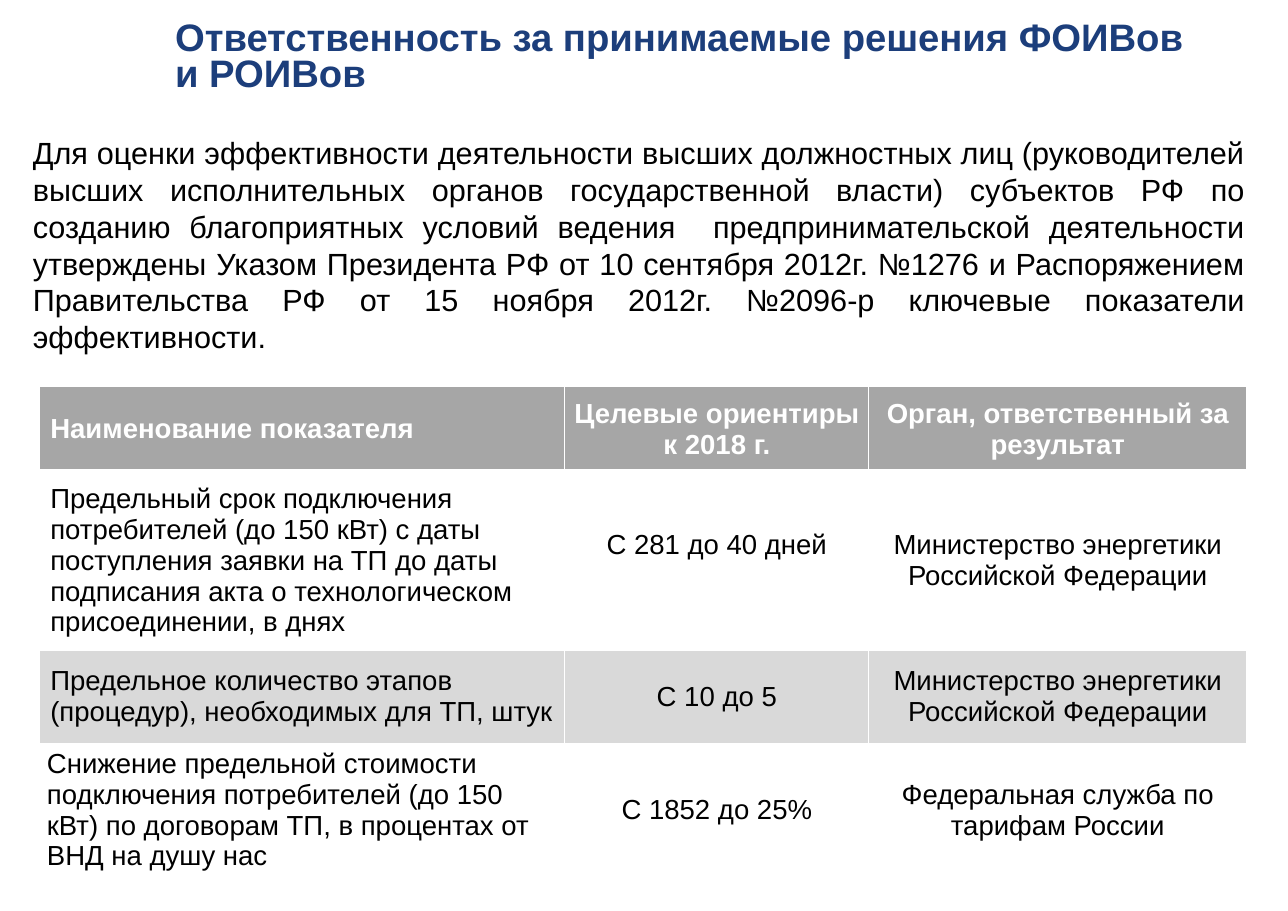
"""Build a slide on officials' responsibility, with a table of target indicators."""
from lxml.etree import SubElement
from pptx import Presentation
from pptx.dml.color import RGBColor
from pptx.enum.text import MSO_ANCHOR, PP_ALIGN
from pptx.oxml.ns import qn
from pptx.util import Inches, Pt

COLORS = {"title": "1C3E7B", "text": "000000", "white": "FFFFFF",
          "header": "A6A6A6", "band": "D9D9D9"}
TITLE = "Ответственность за принимаемые решения ФОИВов и РОИВов"
INTRO = ("Для оценки эффективности деятельности высших должностных лиц (руководителей "
         "высших исполнительных органов государственной власти) субъектов РФ по "
         "созданию благоприятных условий ведения  предпринимательской деятельности "
         "утверждены Указом Президента РФ от 10 сентября 2012г. №1276 и Распоряжением "
         "Правительства РФ от 15 ноября 2012г. №2096-р ключевые показатели эффективности.")
INDICATORS = [
    ("Наименование показателя", "Целевые ориентиры к 2018 г.",
     "Орган, ответственный за результат"),
    ("Предельный срок подключения потребителей (до 150 кВт) с даты поступления заявки "
     "на ТП до даты подписания акта о технологическом присоединении, в днях",
     "С 281 до 40 дней", "Министерство энергетики Российской Федерации"),
    ("Предельное количество этапов (процедур), необходимых для ТП, штук",
     "С 10 до 5", "Министерство энергетики Российской Федерации"),
    ("Снижение предельной стоимости подключения потребителей (до 150 кВт) по договорам "
     "ТП, в процентах от ВНД на душу нас",
     "С 1852 до 25%", "Федеральная служба по тарифам России"),
]
ROW_FILLS = ["header", "white", "band", "white"]
COLUMN_SHARES = [40.8, 23.61, 29.34]
ROW_SHARES = [9.31, 19.59, 10.28, 14.63]

deck = Presentation()
deck.slide_width, deck.slide_height = Inches(11.69), Inches(8.27)
page = deck.slides.add_slide(deck.slide_layouts[6])


def place(left, top, width, height):
    """Turn percentages of the slide into lengths."""
    return (int(deck.slide_width * left / 100), int(deck.slide_height * top / 100),
            int(deck.slide_width * width / 100), int(deck.slide_height * height / 100))


def write(frame, text, size, color, align, bold=False):
    """Put one formatted paragraph into a text frame."""
    frame.word_wrap = True
    para = frame.paragraphs[0]
    para.text = text
    para.alignment = align
    for span in para.runs:
        span.font.name = "Arial"
        span.font.size = Pt(size)
        span.font.bold = bold
        span.font.color.rgb = RGBColor.from_string(COLORS[color])
    return para


title_box = page.shapes.add_textbox(*place(13.6, 2.42, 79.64, 9.07))
title_frame = title_box.text_frame
title_frame.margin_left = title_frame.margin_right = 0
title_frame.margin_top = title_frame.margin_bottom = 0
title_para = write(title_frame, TITLE, 25, "title", PP_ALIGN.LEFT, True)
title_para.line_spacing = Pt(24)

intro_box = page.shapes.add_textbox(*place(1.71, 14.15, 95.81, 25.63))
write(intro_box.text_frame, INTRO, 20, "text", PP_ALIGN.JUSTIFY)

table = page.shapes.add_table(
    len(INDICATORS), len(COLUMN_SHARES),
    *place(3.05, 42.44, sum(COLUMN_SHARES), sum(ROW_SHARES))).table
table.horz_banding = False
for column, share in zip(table.columns, COLUMN_SHARES):
    column.width = int(deck.slide_width * share / 100)
for row, share in zip(table.rows, ROW_SHARES):
    row.height = int(deck.slide_height * share / 100)

last_row = len(INDICATORS) - 1
for r, texts in enumerate(INDICATORS):
    for c, text in enumerate(texts):
        cell = table.cell(r, c)
        cell.vertical_anchor = MSO_ANCHOR.MIDDLE
        if r == last_row or c == 2 or (r, c) == (0, 1):
            cell.margin_left = cell.margin_right = Inches(0.07)
            cell.margin_top = cell.margin_bottom = 0
        write(cell.text_frame, text, 18, "text" if r else "white",
              PP_ALIGN.CENTER if c else PP_ALIGN.LEFT, r == 0)
        for side in ("L", "R", "T", "B"):
            thick = (r, side) in ((0, "B"), (1, "T"))
            border = SubElement(cell._tc.get_or_add_tcPr(), qn(f"a:ln{side}"),
                                w=str(Pt(3 if thick else 1)))
            paint = SubElement(border, qn("a:solidFill"))
            SubElement(paint, qn("a:srgbClr"), val=COLORS["white"])
        cell.fill.solid()
        cell.fill.fore_color.rgb = RGBColor.from_string(COLORS[ROW_FILLS[r]])
table.cell(1, 1).margin_bottom = Inches(0.33)

deck.save("out.pptx")
